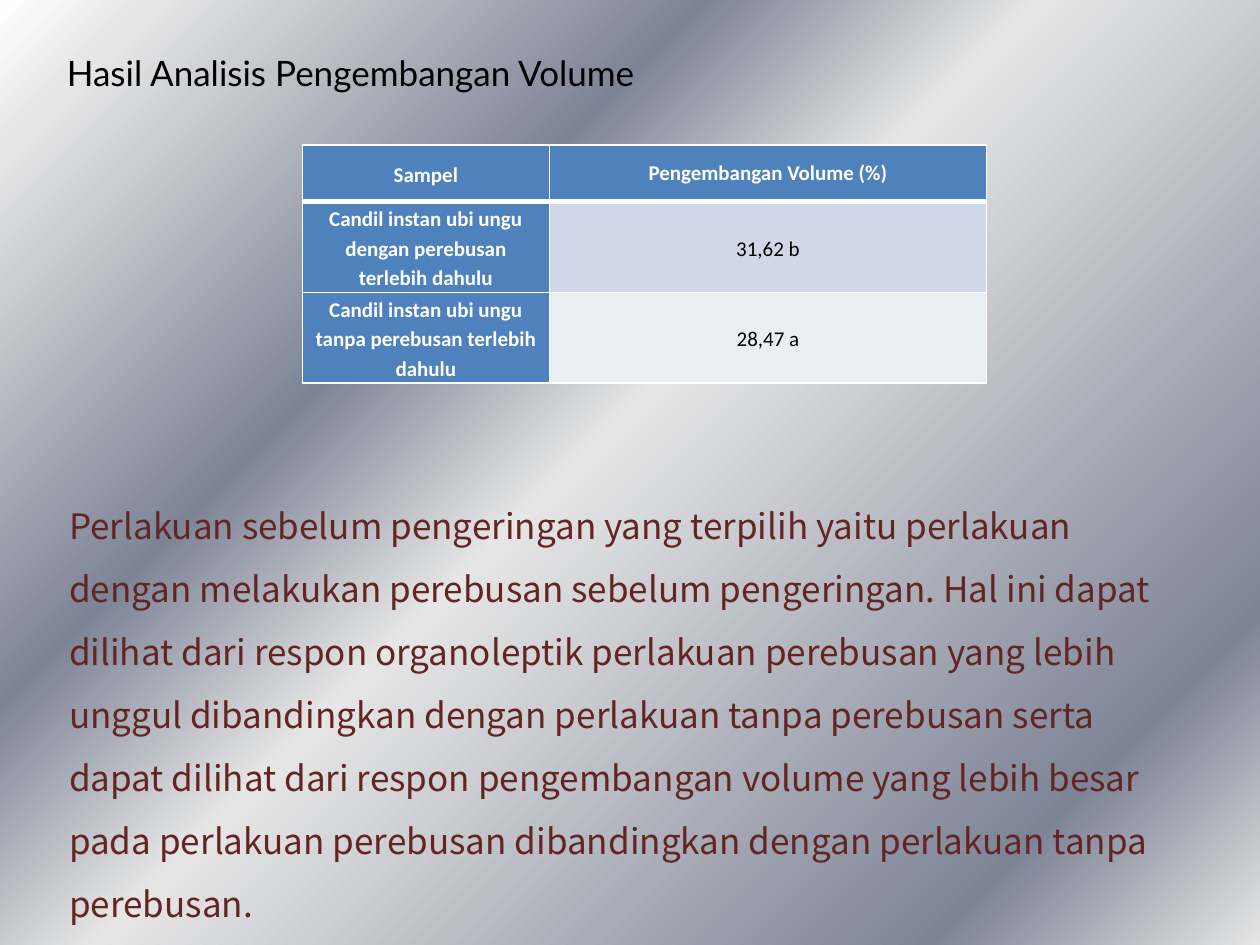
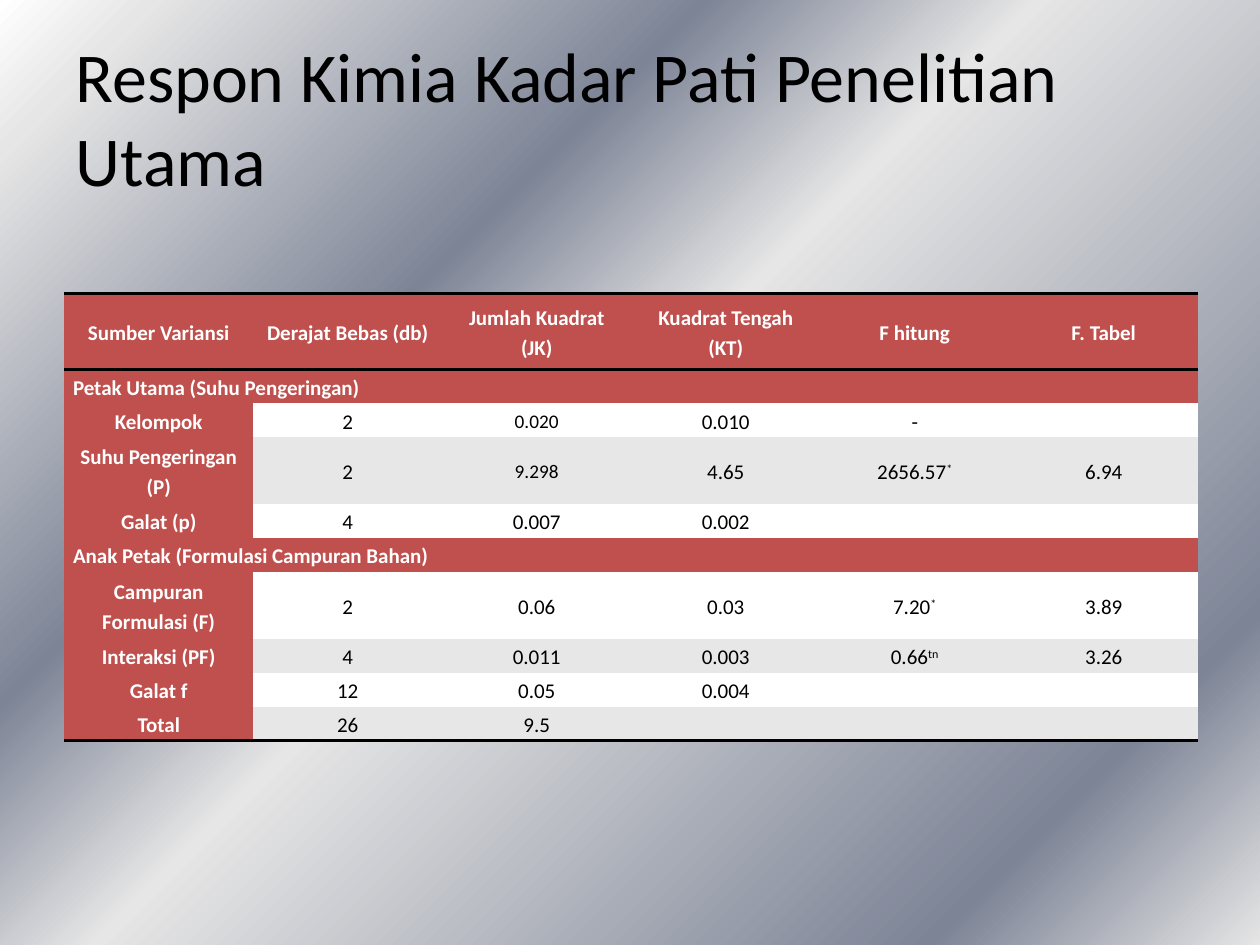
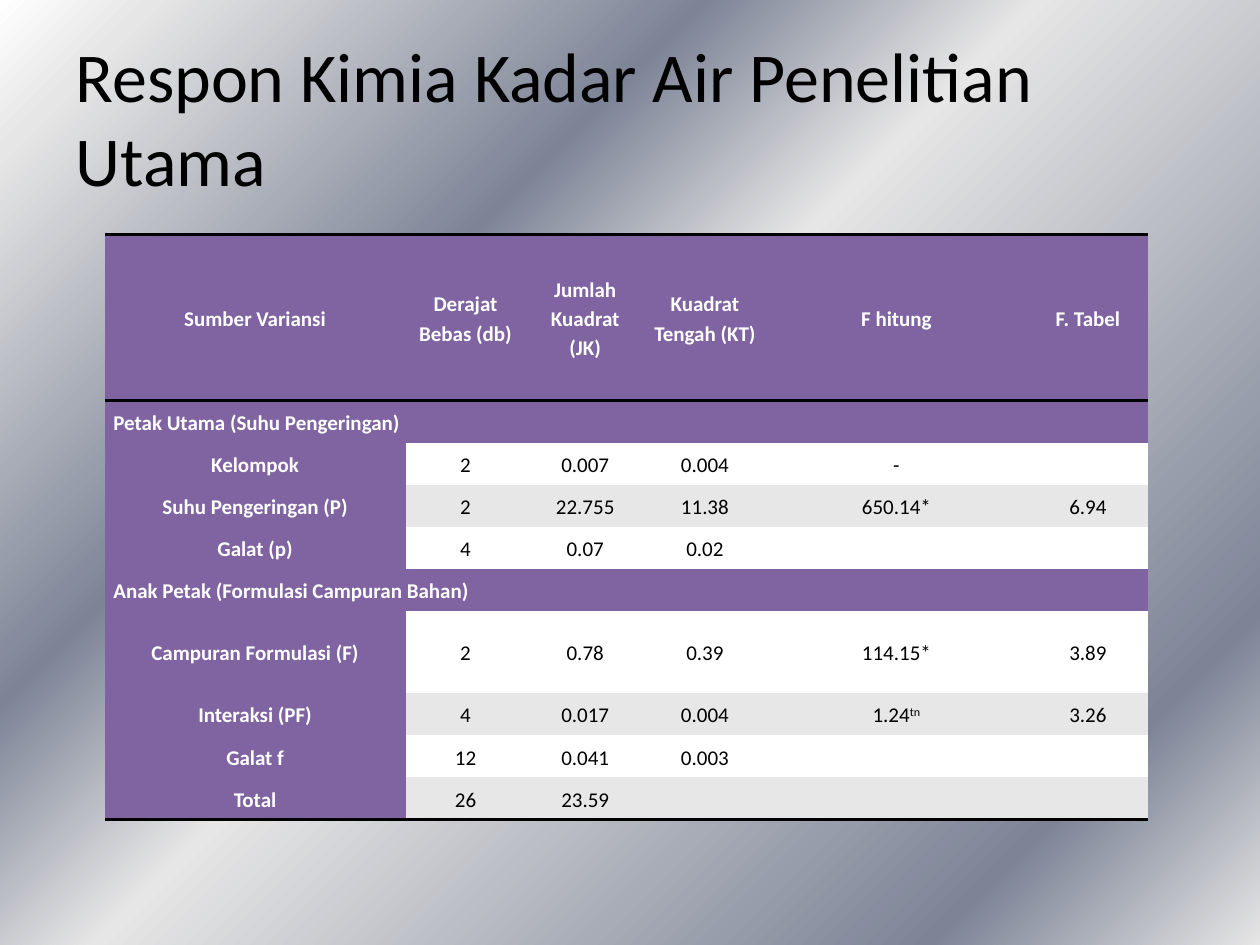
from dataclasses import dataclass

from lxml import etree
from pptx import Presentation
from pptx.dml.color import RGBColor
from pptx.enum.text import MSO_ANCHOR, MSO_AUTO_SIZE, PP_ALIGN
from pptx.oxml import parse_xml
from pptx.oxml.ns import nsdecls, qn
from pptx.util import Emu, Inches, Pt

LEFT, CENTER = PP_ALIGN.LEFT, PP_ALIGN.CENTER
TOP, MIDDLE = MSO_ANCHOR.TOP, MSO_ANCHOR.MIDDLE
GROW, FIXED = MSO_AUTO_SIZE.SHAPE_TO_FIT_TEXT, MSO_AUTO_SIZE.NONE
TITLE_ONLY = 5
NO_STYLE_NO_GRID = "{2D5ABB26-0587-4C30-8999-92F81FD0307C}"

# The slide is a grid of 100 columns by 75 rows
SLIDE_W, SLIDE_H = Inches(10), Inches(7.5)
COL, ROW = SLIDE_W / 100, SLIDE_H / 75


@dataclass(frozen=True)
class Theme:
    black: str = "000000"
    white: str = "FFFFFF"
    body: str = "632523"
    blue: str = "4F81BD"
    red: str = "C0504D"
    purple: str = "8064A2"
    blue_bands: tuple[str, str] = ("E9EDF4", "D0D8E8")
    grey_bands: tuple[str, str] = ("FFFFFF", "E7E7E7")
    backdrop: tuple[tuple[int, str], ...] = (
        (0, "FFFFFF"), (7, "E6E6E6"), (32, "7D8496"),
        (47, "E6E6E6"), (85, "7D8496"), (100, "E6E6E6"))
    font: str = "Calibri"
    heading_font: str = "Lato"
    body_font: str = "Noto Sans CJK KR"
    title_size: float = 40
    text_size: float = 20
    cell_size: float = 12
    small_size: float = 11
    cell_spacing: float = 1.15
    body_spacing: float = 1.5


THEME = Theme()


@dataclass(frozen=True)
class Box:
    """Left, top, width and height in grid columns and rows."""
    x: float
    y: float
    w: float
    h: float

    def place(self) -> tuple[Emu, Emu, Emu, Emu]:
        return (Emu(round(self.x * COL)), Emu(round(self.y * ROW)),
                Emu(round(self.w * COL)), Emu(round(self.h * ROW)))


@dataclass(frozen=True)
class Style:
    size: float
    font: str = THEME.font
    color: str = THEME.black
    bold: bool = False


@dataclass(frozen=True)
class Cell:
    """Cell text; what follows a caret is superscript."""
    text: str
    size: float = THEME.cell_size
    spacing: float = THEME.cell_spacing


@dataclass(frozen=True)
class TableSpec:
    x: float
    y: float
    cols: list[float]
    rows: list[float]
    accent: str
    bands: tuple[str, str]
    cells: list[tuple]
    white_grid: bool = False


@dataclass(frozen=True)
class SlideSpec:
    title: str
    title_box: Box
    title_style: Style
    anchor: MSO_ANCHOR
    auto_size: MSO_AUTO_SIZE
    table: TableSpec
    body: str = ""


# Text and cells
def format_run(r, style: Style) -> None:
    r.font.size = Pt(style.size)
    r.font.name = style.font
    r.font.bold = style.bold
    r.font.color.rgb = RGBColor.from_string(style.color)


def fill_text(tf, text: str, style: Style, spacing: float = 1.0) -> None:
    tf.word_wrap = True
    p = tf.paragraphs[0]
    p.text = text
    p.alignment = LEFT
    p.line_spacing = spacing
    format_run(p.runs[0], style)


def set_border(cell, side: str, color: str, width: float) -> None:
    tc_pr = cell._tc.get_or_add_tcPr()
    ln = parse_xml(
        f'<a:{side} {nsdecls("a")} w="{Pt(width)}"><a:solidFill>'
        f'<a:srgbClr val="{color}"/></a:solidFill></a:{side}>')
    borders = [e for e in tc_pr if e.tag.startswith(qn("a:ln"))]
    tc_pr.insert(len(borders), ln)


def fill_cell(cell, content: Cell, style: Style, fill: str,
              align: PP_ALIGN) -> None:
    cell.fill.solid()
    cell.fill.fore_color.rgb = RGBColor.from_string(fill)
    cell.vertical_anchor = MIDDLE
    cell.margin_left = cell.margin_right = Inches(0.07)
    cell.margin_top = cell.margin_bottom = 0
    p = cell.text_frame.paragraphs[0]
    p.alignment = align
    p.line_spacing = content.spacing
    if not content.text:
        end = etree.SubElement(cell._tc.find(".//" + qn("a:p")),
                               qn("a:endParaRPr"))
        end.set("sz", str(round(style.size * 100)))
        return
    for i, part in enumerate(content.text.split("^")):
        r = p.add_run()
        r.text = part
        format_run(r, style)
        if i:
            r._r.get_or_add_rPr().set("baseline", "30000")


def border_cell(cell, row: int, last: int, white_grid: bool) -> None:
    """Either a white grid, or black rules around header and table end."""
    if white_grid:
        for side in ("lnL", "lnR"):
            set_border(cell, side, THEME.white, 1)
        if row == 0:
            set_border(cell, "lnT", THEME.white, 1)
        set_border(cell, "lnB", THEME.white, 3 if row == 0 else 1)
        return
    if row == 0:
        set_border(cell, "lnT", THEME.black, 2)
    if row in (0, last):
        set_border(cell, "lnB", THEME.black, 2)


def add_table(slide, spec: TableSpec) -> None:
    box = Box(spec.x, spec.y, sum(spec.cols), sum(spec.rows))
    frame = slide.shapes.add_table(len(spec.rows), len(spec.cols), *box.place())
    frame.element.find(".//" + qn("a:tableStyleId")).text = NO_STYLE_NO_GRID
    table = frame.table
    table.first_row = table.horz_banding = False
    for column, width in zip(table.columns, spec.cols):
        column.width = Emu(round(width * COL))
    for row, height in zip(table.rows, spec.rows):
        row.height = Emu(round(height * ROW))

    for i, values in enumerate(spec.cells):
        section = len(values) == 1
        if section:
            table.cell(i, 0).merge(table.cell(i, len(spec.cols) - 1))
        # Short rows are completed with empty cells
        padded = values + ("",) * (len(spec.cols) - len(values))
        for j, value in enumerate(padded):
            cell = table.cell(i, j)
            content = value if isinstance(value, Cell) else Cell(value)
            label = i == 0 or j == 0 or section
            style = Style(content.size, bold=label,
                          color=THEME.white if label else THEME.black)
            fill_cell(cell, content, style,
                      spec.accent if label else spec.bands[i % 2],
                      LEFT if section else CENTER)
            border_cell(cell, i, len(spec.rows) - 1, spec.white_grid)


# Shared background and slide frame
def set_background(master) -> None:
    fill = master.background.fill
    fill.gradient()
    stops = "".join(
        f'<a:gs pos="{pos * 1000}"><a:srgbClr val="{color}"/></a:gs>'
        for pos, color in THEME.backdrop)
    grad = parse_xml(
        f'<a:gradFill {nsdecls("a")} rotWithShape="1"><a:gsLst>{stops}</a:gsLst>'
        '<a:path path="circle"><a:fillToRect r="100000" b="100000"/></a:path>'
        '</a:gradFill>')
    old = master.element.find(".//" + qn("p:bg")).find(".//" + qn("a:gradFill"))
    old.getparent().replace(old, grad)


def add_slide(prs, spec: SlideSpec) -> None:
    slide = prs.slides.add_slide(prs.slide_layouts[TITLE_ONLY])
    title = slide.shapes.title
    title.left, title.top, title.width, title.height = spec.title_box.place()
    tf = title.text_frame
    tf.vertical_anchor = spec.anchor
    tf.auto_size = spec.auto_size
    fill_text(tf, spec.title, spec.title_style)
    add_table(slide, spec.table)
    if spec.body:
        sp = slide.shapes.add_textbox(*Box(4.5, 37.9, 90.4, 30.7).place())
        sp.text_frame.auto_size = GROW
        fill_text(sp.text_frame, spec.body,
                  Style(THEME.text_size, THEME.body_font, THEME.body),
                  THEME.body_spacing)


def variance_slide(title: str, table: TableSpec) -> SlideSpec:
    return SlideSpec(title, Box(5, 3, 90, 12.5), Style(THEME.title_size),
                     MIDDLE, FIXED, table)


# Content
VARIANCE_HEADER = ("Sumber Variansi", "Derajat Bebas (db)",
                   "Jumlah Kuadrat (JK)", "Kuadrat Tengah (KT)",
                   "F hitung", "F. Tabel")
MAIN_PLOT = ("Petak Utama (Suhu Pengeringan)",)
SUB_PLOT = ("Anak Petak (Formulasi Campuran Bahan)",)

VOLUME = TableSpec(
    24, 11.5, [19.6, 34.7], [4.5, 7.2, 7.2], THEME.blue, THEME.blue_bands,
    [("Sampel", Cell("Pengembangan Volume (%)", spacing=1.0)),
     ("Candil instan ubi ungu dengan perebusan terlebih dahulu", "31,62 b"),
     ("Candil instan ubi ungu tanpa perebusan terlebih dahulu", "28,47 a")],
    white_grid=True)

STARCH = TableSpec(
    5.1, 23.3, [15] * 6, [6, 2.7, 2.7, 5.3, 2.7, 2.7, 5.3, 2.7, 2.7, 2.7],
    THEME.red, THEME.grey_bands,
    [VARIANCE_HEADER,
     MAIN_PLOT,
     ("Kelompok", "2", Cell("0.020", THEME.small_size), "0.010", "-"),
     ("Suhu Pengeringan (P)", "2", Cell("9.298", THEME.small_size), "4.65",
      "2656.57^*", "6.94"),
     ("Galat (p)", "4", "0.007", "0.002"),
     SUB_PLOT,
     ("Campuran Formulasi (F)", "2", "0.06", "0.03", "7.20^*", "3.89"),
     ("Interaksi (PF)", "4", "0.011", "0.003", "0.66^tn", "3.26"),
     ("Galat f", "12", "0.05", "0.004"),
     ("Total", "26", "9.5")])

WATER = TableSpec(
    8.3, 18.6, [23.9, 9.5, 9.5, 9.5, 20.9, 9.5],
    [13.2] + [3.34] * 5 + [6.5] + [3.34] * 3,
    THEME.purple, THEME.grey_bands,
    [VARIANCE_HEADER,
     MAIN_PLOT,
     ("Kelompok", "2", "0.007", "0.004", "-"),
     ("Suhu Pengeringan (P)", "2", "22.755", "11.38", "650.14*", "6.94"),
     ("Galat (p)", "4", "0.07", "0.02"),
     SUB_PLOT,
     ("Campuran Formulasi (F)", "2", "0.78", "0.39", "114.15*", "3.89"),
     ("Interaksi (PF)", "4", "0.017", "0.004", "1.24^tn", "3.26"),
     ("Galat f", "12", "0.041", "0.003"),
     ("Total", "26", "23.59")])

SLIDES = [
    SlideSpec(
        "Hasil Analisis Pengembangan Volume", Box(4.3, 3.6, 59.8, 4.4),
        Style(THEME.text_size, THEME.heading_font), TOP, GROW, VOLUME,
        "Perlakuan sebelum pengeringan yang terpilih yaitu perlakuan dengan "
        "melakukan perebusan sebelum pengeringan. Hal ini dapat dilihat dari "
        "respon organoleptik perlakuan perebusan yang lebih unggul "
        "dibandingkan dengan perlakuan tanpa perebusan serta dapat dilihat "
        "dari respon pengembangan volume yang lebih besar pada perlakuan "
        "perebusan dibandingkan dengan perlakuan tanpa perebusan."),
    variance_slide("Respon Kimia Kadar Pati Penelitian Utama", STARCH),
    variance_slide("Respon Kimia Kadar Air Penelitian Utama", WATER),
]


def main() -> None:
    prs = Presentation()
    prs.slide_width, prs.slide_height = SLIDE_W, SLIDE_H
    set_background(prs.slide_master)
    for spec in SLIDES:
        add_slide(prs, spec)
    prs.save("out.pptx")


if __name__ == "__main__":
    main()
